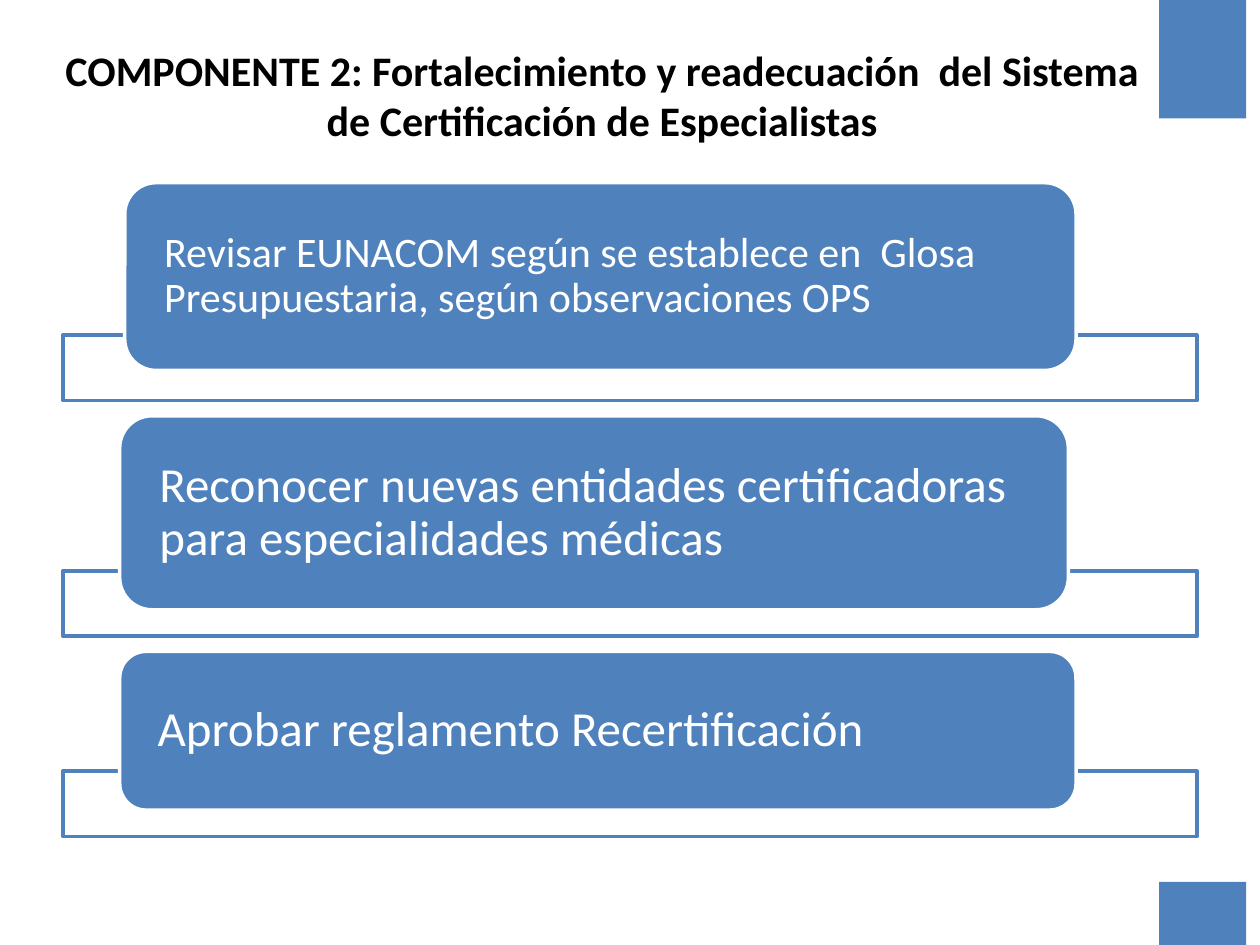
from dataclasses import dataclass

from pptx import Presentation
from pptx.dml.color import RGBColor
from pptx.enum.shapes import MSO_SHAPE
from pptx.enum.text import MSO_ANCHOR, PP_ALIGN
from pptx.shapes.autoshape import Shape
from pptx.slide import Slide
from pptx.text.text import TextFrame
from pptx.util import Inches, Pt

WIDTH, HEIGHT = Inches(10), Inches(7.5)
COL, ROW = WIDTH / 100, HEIGHT / 75
FONT = "Calibri"
BLACK = RGBColor(0x00, 0x00, 0x00)
WHITE = RGBColor(0xFF, 0xFF, 0xFF)
STEEL = RGBColor(0x4F, 0x81, 0xBD)
TITLE = ("COMPONENTE 2: Fortalecimiento y readecuación  del Sistema "
         "de Certificación de Especialistas")


@dataclass(frozen=True)
class Box:
    """Place on the grid of 100 columns by 75 rows."""
    col: float
    row: float
    cols: float
    rows: float

    def emu(self) -> tuple[int, int, int, int]:
        """Return left, top, width and height in EMU."""
        return (round(self.col * COL), round(self.row * ROW),
                round(self.cols * COL), round(self.rows * ROW))


@dataclass(frozen=True)
class Step:
    """Rounded card with its text and the row of the frame behind it."""
    text: str
    size: int
    card: Box
    frame_row: float


STEPS = (
    Step("Revisar EUNACOM según se establece en  Glosa Presupuestaria, "
         "según observaciones OPS", 24, Box(9.9, 14.5, 75.5, 14.9), 26.6),
    Step("Reconocer nuevas entidades certificadoras para especialidades médicas",
         28, Box(9.5, 33, 75.3, 15.4), 45.3),
    Step("Aprobar reglamento Recertificación",
         28, Box(9.5, 51.7, 75.9, 12.6), 61.2),
)
CORNERS = (Box(92, 0, 6.9, 9.4), Box(92, 70, 6.9, 5))


def add_box(s: Slide, kind: MSO_SHAPE, box: Box, fill: RGBColor,
            line: RGBColor | None = None) -> Shape:
    """Add a filled shape, outlined when a line colour is given."""
    sp = s.shapes.add_shape(kind, *box.emu())
    sp.shadow.inherit = False
    sp.fill.solid()
    sp.fill.fore_color.rgb = fill
    if line is None:
        sp.line.fill.background()
    else:
        sp.line.color.rgb = line
        sp.line.width = Pt(2)
    return sp


def write(tf: TextFrame, text: str, size: int, color: RGBColor,
          align: PP_ALIGN, bold: bool = False) -> None:
    """Write one wrapped paragraph."""
    tf.word_wrap = True
    tf.text = text
    p = tf.paragraphs[0]
    p.alignment = align
    font = p.runs[0].font
    font.name, font.size, font.bold = FONT, Pt(size), bold
    font.color.rgb = color


def add_step(s: Slide, step: Step) -> None:
    """Add the frame and the card of a step."""
    add_box(s, MSO_SHAPE.RECTANGLE, Box(5, step.frame_row, 90, 5.2), WHITE, STEEL)
    sp = add_box(s, MSO_SHAPE.ROUNDED_RECTANGLE, step.card, STEEL, WHITE)
    tf = sp.text_frame
    tf.margin_left = tf.margin_right = round(2.4 * COL)
    tf.margin_top = tf.margin_bottom = 0
    tf.vertical_anchor = MSO_ANCHOR.MIDDLE
    write(tf, step.text, step.size, WHITE, PP_ALIGN.LEFT)
    tf.paragraphs[0].line_spacing = 0.9


def main() -> None:
    """Build the slide and save it."""
    prs = Presentation()
    prs.slide_width, prs.slide_height = WIDTH, HEIGHT
    s = prs.slides.add_slide(prs.slide_layouts[6])
    for corner in CORNERS:
        add_box(s, MSO_SHAPE.RECTANGLE, corner, STEEL)
    title = s.shapes.add_textbox(*Box(2.8, 3, 90, 12.5).emu())
    write(title.text_frame, TITLE, 24, BLACK, PP_ALIGN.CENTER, bold=True)
    for step in STEPS:
        add_step(s, step)
    prs.save("out.pptx")


if __name__ == "__main__":
    main()
